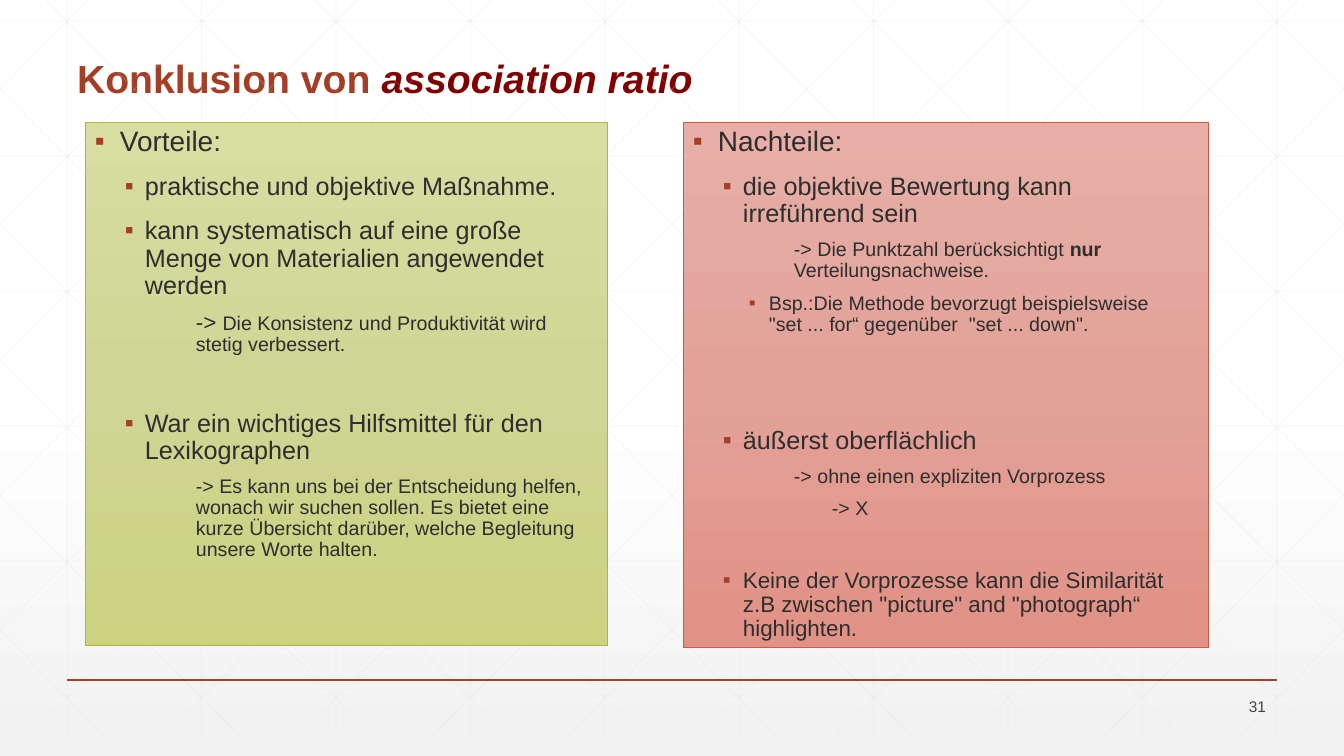
from dataclasses import dataclass

import pptx
import pptx.dml.color
import pptx.enum.shapes
import pptx.enum.text
import pptx.oxml.ns
import pptx.oxml.xmlchemy
import pptx.util
from lxml import etree

SLIDE_W, SLIDE_H = 1344, 756
EMU_PER_PX = 12192000 / SLIDE_W
qn = pptx.oxml.ns.qn


@dataclass(frozen=True)
class Theme:
    font: str = "Arial"
    accent: str = "A43F27"
    emphasis: str = "800000"
    text: str = "2D2E2D"
    number: str = "424342"
    grid: str = "D9D9D9"
    title_pt: int = 28
    heading_pt: int = 20
    point_pt: int = 18
    small_point_pt: int = 16
    detail_pt: int = 14
    number_pt: int = 11


@dataclass(frozen=True)
class Run:
    text: str
    size: int
    bold: bool = False


@dataclass(frozen=True)
class Para:
    runs: tuple[Run, ...]
    level: int
    margin: int
    hanging: int
    before: int


@dataclass(frozen=True)
class Stop:
    pos: int
    color: str
    alpha: int = 100


@dataclass(frozen=True)
class Panel:
    left: int
    top: int
    width: int
    height: int
    stops: tuple[Stop, ...]
    border: str
    paras: tuple[Para, ...]


T = Theme()


def heading(text: str) -> Para:
    return Para((Run(text, T.heading_pt),), 0, 25, 25, 0)


def point(text: str, before: int = 12, size: int = T.point_pt) -> Para:
    return Para((Run(text, size),), 1, 50, 20, before)


def detail(*runs: Run, margin: int = 101, hanging: int = 0) -> Para:
    return Para(runs, 2, margin, hanging, 8)


def small(text: str, bold: bool = False) -> Run:
    return Run(text, T.detail_pt, bold)


BACKGROUND = (Stop(0, "FFFFFF"), Stop(53, "FFFFFF"), Stop(100, "F2F2F2", 65))

PANELS = (
    Panel(85, 122, 522, 523,
          (Stop(0, "D8DEA1"), Stop(50, "CFD595"), Stop(100, "CBD381")), "AEB733", (
              heading("Vorteile:"),
              point("praktische und objektive Maßnahme."),
              point("kann systematisch auf eine große Menge von Materialien "
                    "angewendet werden"),
              detail(Run("-> ", T.small_point_pt),
                     small("Die Konsistenz und Produktivität wird stetig verbessert.")),
              point("War ein wichtiges Hilfsmittel für den Lexikographen", before=39),
              detail(small("-> Es kann uns bei der Entscheidung helfen, wonach wir suchen "
                           "sollen. Es bietet eine kurze Übersicht darüber, welche "
                           "Begleitung unsere Worte halten.")),
          )),
    Panel(683, 122, 525, 525,
          (Stop(0, "E7AFA7"), Stop(50, "E2A299"), Stop(100, "E29186")), "D15A3E", (
              heading("Nachteile:"),
              point("die objektive Bewertung kann irreführend sein"),
              detail(small("-> Die Punktzahl berücksichtigt "), small("nur", bold=True),
                     small(" Verteilungsnachweise.")),
              detail(small("Bsp.:Die Methode bevorzugt beispielsweise "
                           "\"set ... for“ gegenüber  \"set ... down\"."),
                     margin=76, hanging=20),
              point("äußerst oberflächlich", before=66),
              detail(small("-> ohne einen expliziten Vorprozess")),
              detail(small("-> X"), margin=139),
              point("Keine der Vorprozesse kann die Similarität z.B zwischen "
                    "\"picture\" and \"photograph“ highlighten.",
                    before=35, size=T.small_point_pt),
          )),
)


def px(n: float) -> pptx.util.Emu:
    return pptx.util.Emu(round(n * EMU_PER_PX))


def rgb(color: str) -> pptx.dml.color.RGBColor:
    return pptx.dml.color.RGBColor.from_string(color)


def add_run(p, text: str, *, size: int, color: str = T.text,
            bold: bool = False, italic: bool = False) -> None:
    r = p.add_run()
    r.text = text
    r.font.name = T.font
    r.font.size = pptx.util.Pt(size)
    r.font.bold = bold
    r.font.italic = italic
    r.font.color.rgb = rgb(color)


def add_alpha(color_element, percent: int) -> None:
    etree.SubElement(color_element, qn("a:alpha"), val=str(percent * 1000))


def set_gradient(fill, owner, stops: tuple[Stop, ...]) -> None:
    """Fill from top to bottom; owner is the element that holds the fill."""
    fill.gradient()
    fill.gradient_angle = 270
    gs_list = owner.find(".//" + qn("a:gsLst"))
    for gs in list(gs_list):
        gs_list.remove(gs)
    for stop in stops:
        gs = etree.SubElement(gs_list, qn("a:gs"), pos=str(stop.pos * 1000))
        clr = etree.SubElement(gs, qn("a:srgbClr"), val=stop.color)
        if stop.alpha < 100:
            add_alpha(clr, stop.alpha)


def add_line(slide, x1: float, y1: float, x2: float, y2: float, *,
             color: str, width: float, alpha: int = 100) -> None:
    line = slide.shapes.add_connector(pptx.enum.shapes.MSO_CONNECTOR.STRAIGHT,
                                      px(x1), px(y1), px(x2), px(y2))
    line.line.color.rgb = rgb(color)
    line.line.width = pptx.util.Pt(width)
    if alpha < 100:
        add_alpha(line.element.find(".//" + qn("a:srgbClr")), alpha)
    etree.SubElement(line.element.spPr, qn("a:effectLst"))


def add_grid(slide) -> None:
    top, bottom, step, run = -21, 735, 134.4, 751
    style = dict(color=T.grid, width=0.5, alpha=25)
    for i in range(10):
        x = step * (i + 0.5)
        add_line(slide, x, top, x, bottom, **style)
    for i in range(6):
        y = 21 + 135 * i
        add_line(slide, 0, y, SLIDE_W, y, **style)
    slope = (bottom - top) / run
    for i in range(-5, 10):
        start = 25 + step * i
        x1, x2 = max(start, 0), min(start + run, SLIDE_W)
        y1, y2 = (top + (x - start) * slope for x in (x1, x2))
        add_line(slide, x1, y1, x2, y2, **style)
        add_line(slide, SLIDE_W - x1, y1, SLIDE_W - x2, y2, **style)


def add_para(p, para: Para) -> None:
    p.level = para.level
    p.alignment = pptx.enum.text.PP_ALIGN.LEFT
    p.line_spacing = 0.9
    p.space_before = pptx.util.Pt(para.before)
    pPr = p._p.get_or_add_pPr()
    pPr.set("marL", str(px(para.margin)))
    pPr.set("indent", str(px(-para.hanging)))
    if para.hanging:
        clr = etree.SubElement(pPr, qn("a:buClr"))
        etree.SubElement(clr, qn("a:srgbClr"), val=T.accent)
        etree.SubElement(pPr, qn("a:buFont"), typeface=T.font)
        etree.SubElement(pPr, qn("a:buChar"), char="▪")
    for run in para.runs:
        add_run(p, run.text, size=run.size, bold=run.bold)


def add_panel(slide, panel: Panel) -> None:
    sp = slide.shapes.add_shape(pptx.enum.shapes.MSO_SHAPE.RECTANGLE, px(panel.left),
                                px(panel.top), px(panel.width), px(panel.height))
    sp.shadow.inherit = False
    set_gradient(sp.fill, sp.element, panel.stops)
    sp.line.color.rgb = rgb(panel.border)
    sp.line.width = pptx.util.Pt(0.5)
    tf = sp.text_frame
    tf.word_wrap = True
    tf.vertical_anchor = pptx.enum.text.MSO_ANCHOR.TOP
    for i, para in enumerate(panel.paras):
        add_para(tf.add_paragraph() if i else tf.paragraphs[0], para)


def format_title(slide) -> None:
    title = slide.shapes.title
    title.left, title.top, title.width, title.height = map(px, (67, 30, 1210, 77))
    tf = title.text_frame
    tf.auto_size = pptx.enum.text.MSO_AUTO_SIZE.NONE
    tf.vertical_anchor = pptx.enum.text.MSO_ANCHOR.BOTTOM
    p = tf.paragraphs[0]
    p.alignment = pptx.enum.text.PP_ALIGN.LEFT
    p.line_spacing = 0.9
    add_run(p, "Konklusion von ", size=T.title_pt, color=T.accent, bold=True)
    add_run(p, "association ratio", size=T.title_pt, color=T.emphasis, bold=True, italic=True)


def add_page_number(slide) -> None:
    tf = slide.shapes.add_textbox(px(1175), px(694), px(101), px(24)).text_frame
    tf.word_wrap = True
    tf.vertical_anchor = pptx.enum.text.MSO_ANCHOR.MIDDLE
    p = tf.paragraphs[0]
    p.alignment = pptx.enum.text.PP_ALIGN.RIGHT
    add_run(p, "31", size=T.number_pt, color=T.number)


def main() -> None:
    prs = pptx.Presentation()
    prs.slide_width, prs.slide_height = px(SLIDE_W), px(SLIDE_H)
    slide = prs.slides.add_slide(prs.slide_layouts.get_by_name("Title Only"))
    set_gradient(slide.background.fill, slide.element, BACKGROUND)
    add_grid(slide)
    add_line(slide, 67, 680, 1277, 680, color=T.accent, width=1)
    format_title(slide)
    for panel in PANELS:
        add_panel(slide, panel)
    add_page_number(slide)
    prs.save("out.pptx")


if __name__ == "__main__":
    main()
